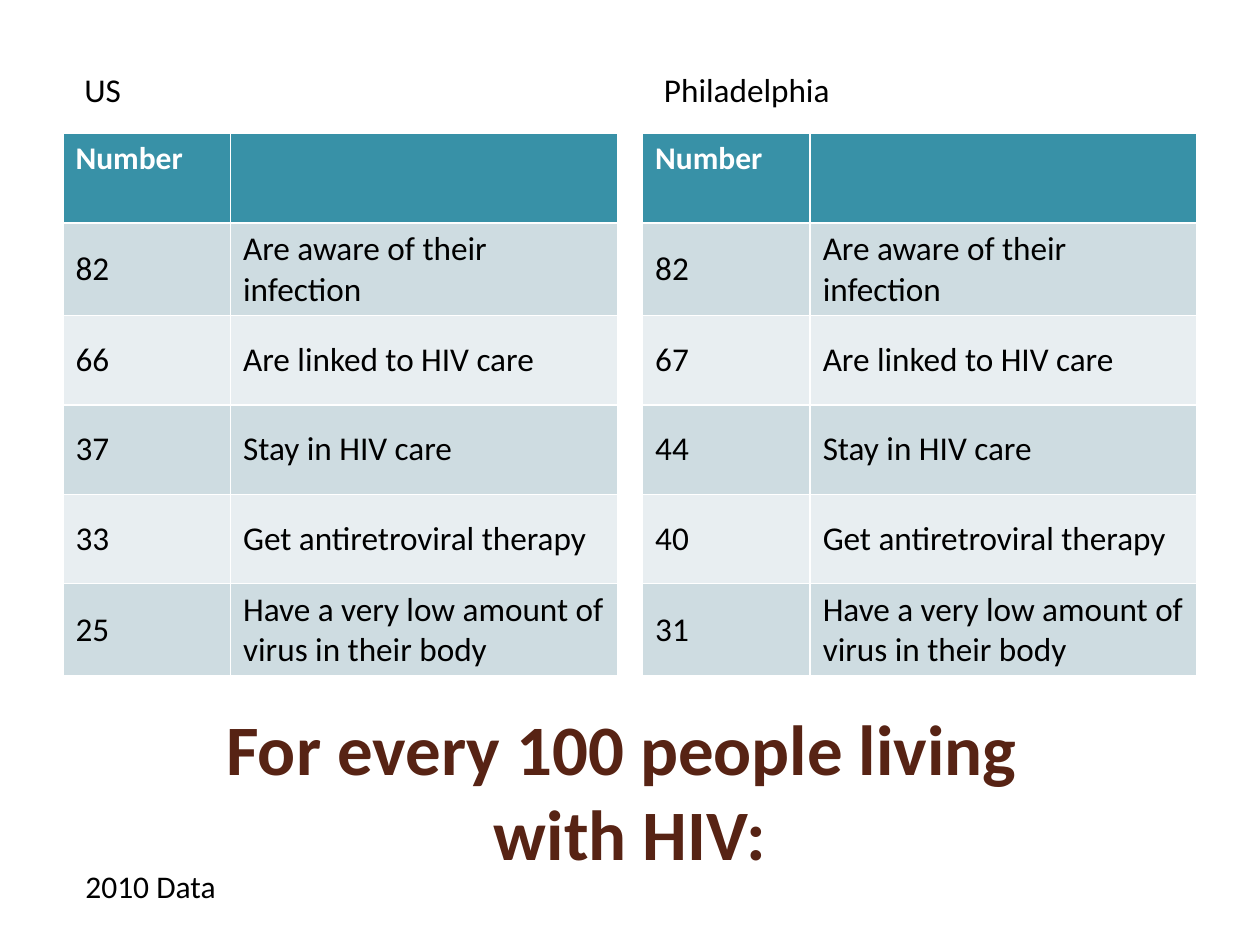
from pptx import Presentation
from pptx.dml.color import RGBColor
from pptx.enum.shapes import MSO_SHAPE
from pptx.enum.text import MSO_ANCHOR, PP_ALIGN
from pptx.util import Inches, Pt

RECT = MSO_SHAPE.RECTANGLE
TOP, MIDDLE = MSO_ANCHOR.TOP, MSO_ANCHOR.MIDDLE
LEFT, CENTER = PP_ALIGN.LEFT, PP_ALIGN.CENTER

WHITE = RGBColor(0xFF, 0xFF, 0xFF)
BLACK = RGBColor(0x00, 0x00, 0x00)
BROWN = RGBColor(0x57, 0x23, 0x14)
TEAL = RGBColor(0x38, 0x91, 0xA7)
BANDS = [RGBColor(0xE8, 0xEE, 0xF1), RGBColor(0xCE, 0xDC, 0xE1)]

STAGES = [
    "Are aware of their infection",
    "Are linked to HIV care",
    "Stay in HIV care",
    "Get antiretroviral therapy",
    "Have a very low amount of virus in their body",
]
PLACES = [
    ("US", [82, 66, 37, 33, 25]),
    ("Philadelphia", [82, 67, 44, 40, 31]),
]

prs = Presentation()
prs.slide_width, prs.slide_height = Inches(10), Inches(7.5)
s = prs.slides.add_slide(prs.slide_layouts[6])

MARGIN = Inches(0.5)
GAP = Inches(0.2)
COL_W = (prs.slide_width - 2 * MARGIN - GAP) // 2
NUMBER_W = Inches(1.33)
HEAD_TOP, HEAD_H = Inches(0.36), Inches(0.7)
TABLE_TOP = HEAD_TOP + HEAD_H
ROW_H = Inches(0.71)


def write(tf, text, size, color, bold=False, align=LEFT, anchor=MIDDLE):
    tf.word_wrap = True
    tf.vertical_anchor = anchor
    p = tf.paragraphs[0]
    p.text = text
    p.alignment = align
    p.font.name = "Calibri"
    p.font.size = Pt(size)
    p.font.bold = bold
    p.font.color.rgb = color


title = s.shapes.add_textbox(MARGIN, Inches(5.64), prs.slide_width - 2 * MARGIN, Inches(1.25))
write(title.text_frame, "For every 100 people living \vwith HIV:", 40.5, BROWN, True, CENTER)

for i, (place, numbers) in enumerate(PLACES):
    left = MARGIN + i * (COL_W + GAP)

    sp = s.shapes.add_shape(RECT, left, HEAD_TOP, COL_W, HEAD_H)
    sp.shadow.inherit = False
    sp.fill.solid()
    sp.fill.fore_color.rgb = WHITE
    sp.line.color.rgb = WHITE
    sp.line.width = Pt(0.85)
    sp.text_frame.margin_left = Inches(0.17)
    write(sp.text_frame, place, 19, BLACK)

    rows = [("Number", "")] + list(zip(map(str, numbers), STAGES))
    table = s.shapes.add_table(len(rows), 2, left, TABLE_TOP, COL_W, ROW_H * len(rows)).table
    table.columns[0].width = NUMBER_W
    table.columns[1].width = COL_W - NUMBER_W
    for r, row in enumerate(rows):
        table.rows[r].height = ROW_H
        for c, text in enumerate(row):
            cell = table.cell(r, c)
            cell.fill.solid()
            cell.fill.fore_color.rgb = BANDS[r % 2] if r else TEAL
            cell.vertical_anchor = MIDDLE if r else TOP
            p = cell.text_frame.paragraphs[0]
            p.text = text
            p.font.name = "Calibri"
            p.font.size = Pt(19 if r else 18)
            p.font.bold = r == 0
            p.font.color.rgb = BLACK if r else WHITE

note = s.shapes.add_textbox(Inches(0.58), Inches(6.83), Inches(2.5), Inches(0.4))
write(note.text_frame, "2010 Data", 18, BLACK, anchor=TOP)

prs.save("out.pptx")
